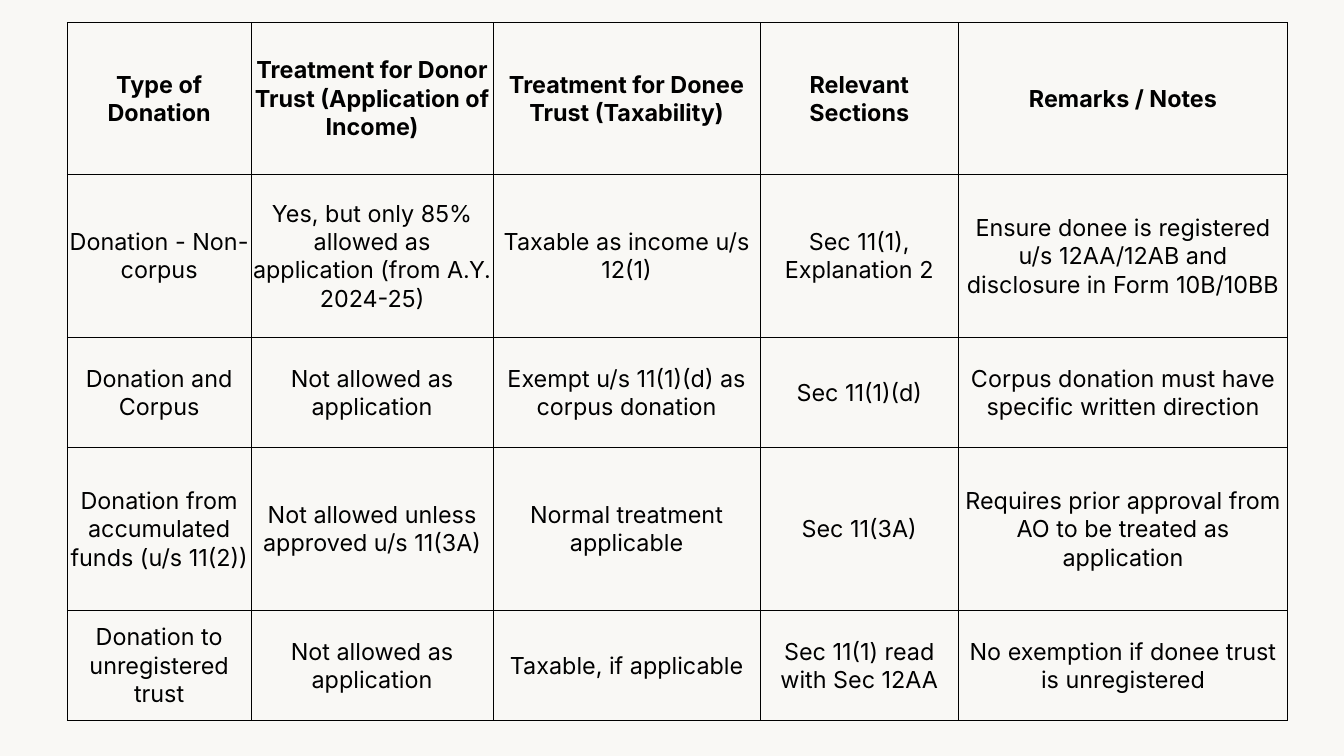
from lxml.etree import SubElement
from pptx import Presentation
from pptx.dml.color import RGBColor
from pptx.enum.text import MSO_ANCHOR, PP_ALIGN
from pptx.oxml.ns import qn
from pptx.util import Inches, Pt

COLORS = {"background": "F9F8F5", "text": "000000", "border": "000000"}
FONT = "Inter"
COLUMN_WIDTHS = [2.19, 2.88, 3.18, 2.36, 3.92]
ROW_HEIGHTS = [1.8, 1.95, 1.3, 1.95, 1.3]
DONATIONS = [
    ["Type of Donation", "Treatment for Donor Trust (Application of Income)",
     "Treatment for Donee Trust (Taxability)", "Relevant Sections", "Remarks / Notes"],
    ["Donation - Non-corpus", "Yes, but only 85% allowed as application (from A.Y. 2024-25)",
     "Taxable as income u/s 12(1)", "Sec 11(1), Explanation 2",
     "Ensure donee is registered u/s 12AA/12AB and disclosure in Form 10B/10BB"],
    ["Donation and Corpus", "Not allowed as application",
     "Exempt u/s 11(1)(d) as corpus donation", "Sec 11(1)(d)",
     "Corpus donation must have specific written direction"],
    ["Donation from accumulated funds (u/s 11(2))", "Not allowed unless approved u/s 11(3A)",
     "Normal treatment applicable", "Sec 11(3A)",
     "Requires prior approval from AO to be treated as application"],
    ["Donation to unregistered trust", "Not allowed as application",
     "Taxable, if applicable", "Sec 11(1) read with Sec 12AA",
     "No exemption if donee trust is unregistered"],
]


def write_text(text_frame, text, size=20, bold=False, color="text", align=PP_ALIGN.CENTER):
    """Write one formatted paragraph into a text frame."""
    paragraph = text_frame.paragraphs[0]
    paragraph.alignment = align
    run = paragraph.add_run()
    run.text = text
    run.font.name = FONT
    run.font.size = Pt(size)
    run.font.bold = bold
    run.font.color.rgb = RGBColor.from_string(COLORS[color])


def set_borders(cell, color="border", width=0.5):
    """Draw a solid line on all four sides of a cell."""
    properties = cell._tc.get_or_add_tcPr()
    for side in ("lnL", "lnR", "lnT", "lnB"):
        line = SubElement(properties, qn(f"a:{side}"), w=str(Pt(width)))
        fill = SubElement(line, qn("a:solidFill"))
        SubElement(fill, qn("a:srgbClr"), val=COLORS[color])


def format_cell(cell):
    """Give a cell its borders, clear fill, margins and anchor."""
    set_borders(cell)
    cell.fill.background()
    cell.vertical_anchor = MSO_ANCHOR.MIDDLE
    cell.margin_left = cell.margin_right = cell.margin_top = Inches(0.01)
    cell.margin_bottom = Inches(0)


def add_donation_table(slide, left, top):
    """Add the table of donation types and their tax treatment."""
    frame = slide.shapes.add_table(
        len(ROW_HEIGHTS), len(COLUMN_WIDTHS), Inches(left), Inches(top),
        Inches(sum(COLUMN_WIDTHS)), Inches(sum(ROW_HEIGHTS)))
    table = frame.table
    table.horz_banding = False
    for column, width in zip(table.columns, COLUMN_WIDTHS):
        column.width = Inches(width)
    for index, (row, height, texts) in enumerate(zip(table.rows, ROW_HEIGHTS, DONATIONS)):
        row.height = Inches(height)
        for cell, text in zip(row.cells, texts):
            format_cell(cell)
            write_text(cell.text_frame, text, bold=index == 0)


def main():
    """Build the slide and save it."""
    presentation = Presentation()
    presentation.slide_width = Inches(16)
    presentation.slide_height = Inches(9)
    slide = presentation.slides.add_slide(presentation.slide_layouts[6])
    background = slide.background.fill
    background.solid()
    background.fore_color.rgb = RGBColor.from_string(COLORS["background"])
    add_donation_table(slide, left=0.8, top=0.27)
    presentation.save("out.pptx")


if __name__ == "__main__":
    main()
